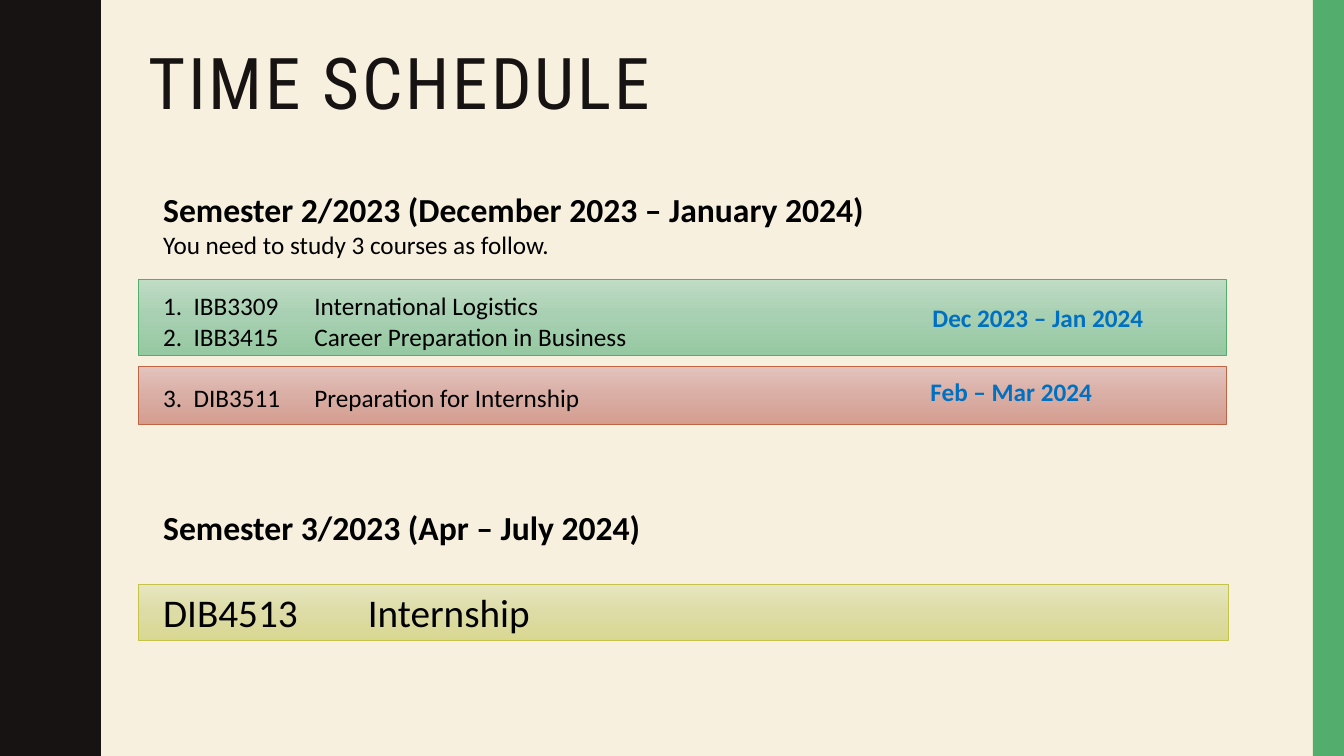
from copy import deepcopy

from lxml import etree
from pptx import Presentation
from pptx import util as u
from pptx.dml.color import RGBColor
from pptx.enum import shapes, text
from pptx.oxml.ns import qn

THEME = {
    "paper": "F7F0DF", "ink": "171312", "edge": "53AE6E", "black": "000000", "date": "0070C0",
    "green": ("53AE6E", ["BFDCC5", "A7CFB1", "95C9A1"]),
    "red": ("BF6546", ["E3C4BE", "D9AEA5", "D59D90"]),
    "olive": ("C5C34A", ["E6E6C0", "DDDCA6", "D9D892"]),
    "title_font": "Roboto Condensed", "body_font": "Calibri",
    "title": 51, "course": 28, "heading": 24, "body": 18,
}
HEADING = {"size": u.Pt(THEME["heading"]), "bold": True}
BODY = {"size": u.Pt(THEME["body"]), "bold": False}
COURSE = {"size": u.Pt(THEME["course"]), "bold": False}
DATE = {"size": u.Pt(THEME["body"]), "bold": True}


def color(name):
    return RGBColor.from_string(THEME.get(name, name))


def add_text(page, place, ink, lines):
    """Add a text box; each line is (words, font format, space before, tab stop in inches)."""
    box = page.shapes.add_textbox(*map(u.Inches, place))
    box.text_frame.word_wrap = True
    for number, (words, look, gap, tab) in enumerate(lines):
        para = box.text_frame.paragraphs[0] if number == 0 else box.text_frame.add_paragraph()
        para.space_before = u.Pt(gap)
        if tab:
            stops = etree.SubElement(para._p.get_or_add_pPr(), qn("a:tabLst"))
            etree.SubElement(stops, qn("a:tab"), pos=str(u.Inches(tab)), algn="l")
        span = para.add_run()
        span.text = words
        span.font.name = THEME["body_font"]
        span.font.color.rgb = color(ink)
        for key, value in look.items():
            setattr(span.font, key, value)


deck = Presentation()
deck.slide_width, deck.slide_height = u.Inches(13.33), u.Inches(7.5)
page = deck.slides.add_slide(deck.slide_layouts[5])
page.background.fill.solid()
page.background.fill.fore_color.rgb = color("paper")

# Wavy left edge: half a wave, mirrored and repeated down the slide
half_wave = [(0.78, 0), (0.78, 0.07), (0.79, 0.14), (0.8, 0.2), (0.81, 0.25),
             (0.83, 0.29), (0.85, 0.33), (0.87, 0.38), (0.89, 0.42), (0.91, 0.46),
             (0.93, 0.5), (0.95, 0.55), (0.96, 0.61), (0.97, 0.68), (0.97, 0.75)]
period = 1.5
wave = half_wave + [(x, period - y) for x, y in reversed(half_wave[:-1])]
outline = page.shapes.build_freeform(0, 0, scale=u.Inches(1))
outline.add_line_segments(
    [(x, y + period * turn) for turn in range(5) for x, y in wave] + [(0, 7.5)], close=True)
wavy_edge = outline.convert_to_shape()
right_edge = page.shapes.add_shape(
    shapes.MSO_SHAPE.RECTANGLE, *map(u.Inches, (13.02, 0, 0.31, 7.5)))
for edge, name in ((wavy_edge, "ink"), (right_edge, "edge")):
    edge.shadow.inherit = False
    edge.fill.solid()
    edge.fill.fore_color.rgb = color(name)
    edge.line.fill.background()

title = page.shapes.title
title.left, title.top, title.width, title.height = map(u.Inches, (1.37, 0.42, 11.13, 0.96))
title.text_frame.text = "TIME SCHEDULE"
title.text_frame.vertical_anchor = text.MSO_ANCHOR.TOP
heading = title.text_frame.paragraphs[0]
heading.alignment = text.PP_ALIGN.LEFT
heading.line_spacing = 0.9
span = heading.runs[0]
span.font.name = THEME["title_font"]
span.font.size = u.Pt(THEME["title"])
span.font.color.rgb = color("ink")
span._r.get_or_add_rPr().set("spc", "200")

# Gradient bars behind the courses
for name, top, width, height in (("green", 2.77, 10.79, 0.76),
                                 ("red", 3.63, 10.79, 0.58),
                                 ("olive", 5.8, 10.81, 0.55)):
    border, shades = THEME[name]
    bar = page.shapes.add_shape(
        shapes.MSO_SHAPE.RECTANGLE, *map(u.Inches, (1.37, top, width, height)))
    bar.shadow.inherit = False
    bar.line.color.rgb = color(border)
    bar.line.width = u.Pt(0.5)
    bar.fill.gradient()
    bar.fill.gradient_angle = 270
    first = bar._element.spPr.find(".//" + qn("a:gs"))
    first.addnext(deepcopy(first))
    for number, (stop, shade) in enumerate(zip(bar.fill.gradient_stops, shades)):
        stop.position = number / 2
        stop.color.rgb = color(shade)

line_gap = THEME["body"] * 1.22
add_text(page, (1.52, 1.83, 11.07, 2.63), "black", [
    ("Semester 2/2023 (December 2023 – January 2024)", HEADING, 0, None),
    ("You need to study 3 courses as follow.", BODY, 0, None),
    ("1.  IBB3309\tInternational Logistics", BODY, line_gap, 1.5),
    ("2.  IBB3415\tCareer Preparation in Business", BODY, 0, 1.5),
    ("3.  DIB3511\tPreparation for Internship", BODY, line_gap, 1.5),
])
add_text(page, (9.15, 2.95, 3.03, 0.4), "date", [("Dec 2023 – Jan 2024", DATE, 0, None)])
add_text(page, (9.13, 3.68, 3.03, 0.4), "date", [("Feb – Mar 2024", DATE, 0, None)])
add_text(page, (1.52, 4.98, 9.34, 1.38), "black", [
    ("Semester 3/2023 (Apr – July 2024)", HEADING, 0, None),
    ("DIB4513\tInternship", COURSE, THEME["heading"] * 1.22, 2.03),
])

deck.save("out.pptx")
